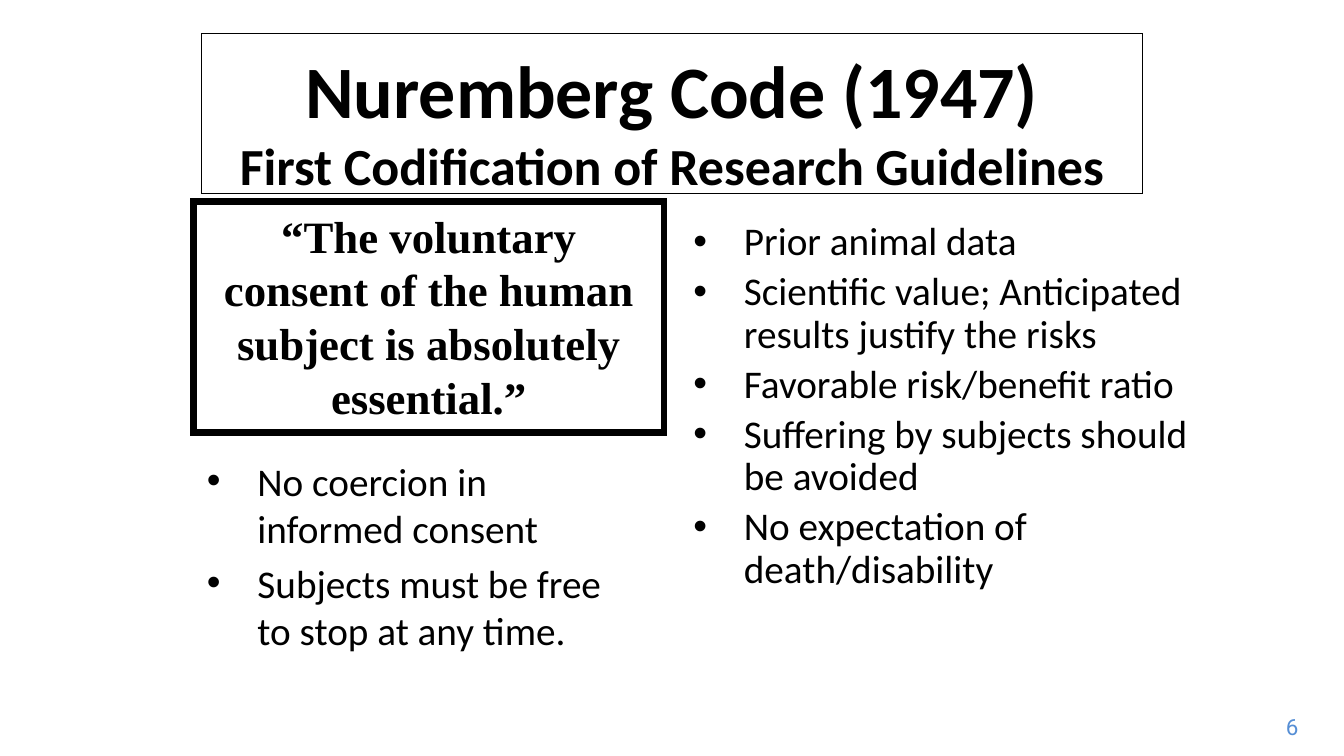
from pptx import Presentation
from pptx.dml.color import RGBColor
from pptx.enum.shapes import MSO_SHAPE as Shape
from pptx.enum.text import MSO_ANCHOR as Anchor, MSO_AUTO_SIZE as AutoSize, PP_ALIGN as Align
from pptx.oxml.ns import qn
from pptx.util import Inches, Pt
from lxml.etree import SubElement

BLACK, WHITE, BLUE = "000000", "FFFFFF", "558ED5"


def color(value):
    return RGBColor.from_string(value)


class SlideBuilder:
    """Holds the style and the current slide, and adds each kind of element."""

    font_name = "Calibri"
    list_size = 21

    def __init__(self, slide):
        self.slide = slide

    def place(self, shape, box):
        shape.left, shape.top, shape.width, shape.height = map(Inches, box)

    def style(self, paragraph, size, name=font_name, bold=False, ink=BLACK):
        font = paragraph.font
        font.name, font.size, font.bold = name, Pt(size), bold
        font.color.rgb = color(ink)

    def outline(self, shape, width):
        shape.line.color.rgb = color(BLACK)
        shape.line.width = Pt(width)
        line = shape.element.spPr.find(qn("a:ln"))
        SubElement(line, qn("a:miter"), lim="800000")

    def title(self, lines, box):
        shape = self.slide.shapes.title
        self.place(shape, box)
        shape.fill.solid()
        shape.fill.fore_color.rgb = color(WHITE)
        self.outline(shape, 0)
        frame = shape.text_frame
        frame.text = "\n".join(text for text, size in lines)
        frame.auto_size = AutoSize.NONE
        frame.word_wrap = False
        frame.vertical_anchor = Anchor.TOP
        frame.margin_top = Inches(0.08)
        for paragraph, (text, size) in zip(frame.paragraphs, lines):
            paragraph.alignment = Align.CENTER
            paragraph.space_before = Pt(0)
            self.style(paragraph, size, bold=True)

    def bullets(self, index, items, box, line_spacing=1.0):
        shape = self.slide.placeholders[index]
        self.place(shape, box)
        frame = shape.text_frame
        frame.text = "\n".join(items)
        frame.auto_size = AutoSize.NONE
        frame.paragraphs[0].space_before = Pt(0)
        for paragraph in frame.paragraphs:
            paragraph.line_spacing = line_spacing
            self.style(paragraph, self.list_size)

    def quote(self, text, box):
        shape = self.slide.shapes.add_shape(Shape.RECTANGLE, *map(Inches, box))
        shape.shadow.inherit = False
        shape.fill.background()
        self.outline(shape, 3.5)
        frame = shape.text_frame
        frame.text = text
        frame.word_wrap = True
        frame.vertical_anchor = Anchor.TOP
        paragraph = frame.paragraphs[0]
        paragraph.alignment = Align.CENTER
        self.style(paragraph, 24, "Times New Roman", bold=True)

    def page_number(self, number, box):
        frame = self.slide.shapes.add_textbox(*map(Inches, box)).text_frame
        frame.text = str(number)
        frame.word_wrap = False
        paragraph = frame.paragraphs[0]
        paragraph.alignment = Align.RIGHT
        self.style(paragraph, 12, "Roboto", ink=BLUE)


def main():
    presentation = Presentation()
    presentation.slide_width = Inches(10)
    presentation.slide_height = Inches(10 * 9 / 16)
    two_content = presentation.slide_layouts.get_by_name("Two Content")
    builder = SlideBuilder(presentation.slides.add_slide(two_content))

    builder.title(
        [("Nuremberg Code (1947)", 39.6),
         ("First Codification of Research Guidelines", 27.9)],
        (1.5, 0.25, 7, 1.19),
    )
    builder.quote(
        "“The voluntary consent of the human subject is absolutely essential.”",
        (1.44, 1.5, 3.5, 1.72),
    )
    builder.bullets(
        1,
        ["No coercion in informed consent",
         "Subjects must be free to stop at any time."],
        (1.44, 3.35, 3.25, 1.72),
    )
    builder.bullets(
        2,
        ["Prior animal data",
         "Scientific value; Anticipated results justify the risks",
         "Favorable risk/benefit ratio",
         "Suffering by subjects should be avoided",
         "No expectation of death/disability"],
        (5.06, 1.6, 3.94, 3.38),
        line_spacing=0.9,
    )
    builder.page_number(6, (9.35, 5.26, 0.41, 0.3))
    presentation.save("out.pptx")


if __name__ == "__main__":
    main()
